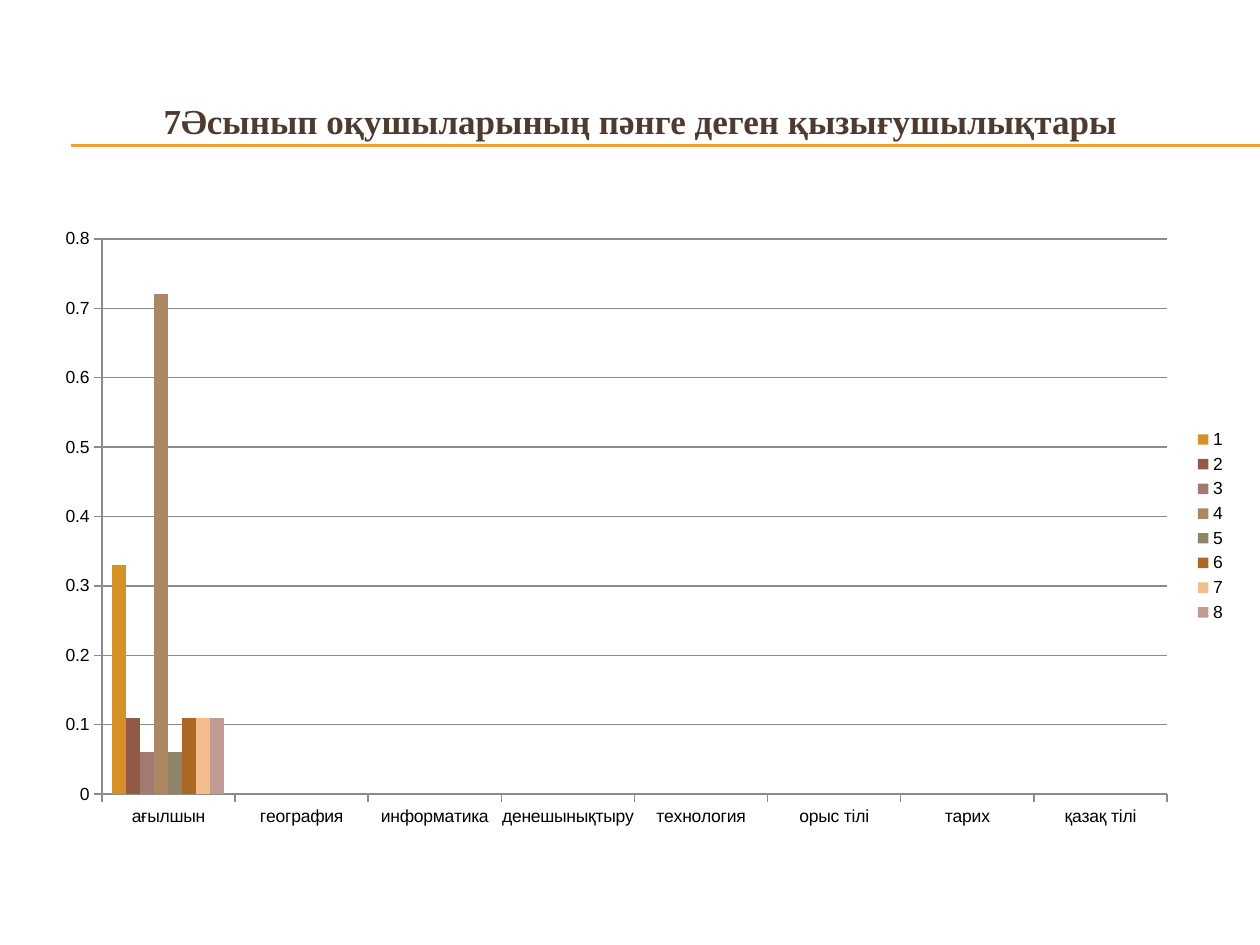
from lxml import etree
from pptx import Presentation
from pptx.chart.data import CategoryChartData as Data
from pptx.dml.color import RGBColor
from pptx.enum.chart import XL_CHART_TYPE as Kind, XL_LEGEND_POSITION as Side, XL_TICK_MARK as Tick
from pptx.enum.shapes import MSO_CONNECTOR as Link
from pptx.enum.text import MSO_ANCHOR as Anchor, PP_ALIGN as Align
from pptx.oxml import parse_xml
from pptx.oxml.ns import nsdecls, qn
from pptx.util import Pt

SCALE = 914400 / 126
TITLE = "7Әсынып оқушыларының пәнге деген қызығушылықтары"
SUBJECTS = ["ағылшын", "география", "информатика", "денешынықтыру",
            "технология", "орыс тілі", "тарих", "қазақ тілі"]
SCORES = [0.33, 0.11, 0.06, 0.72, 0.06, 0.11, 0.11, 0.11]
COLORS = ["D59028", "925945", "A17B72", "AD8761",
          "8F8467", "AB6824", "F3BD8B", "BF9B93"]


def emu(*px):
    """Turn px lengths into EMU."""
    return [round(n * SCALE) for n in px]


def paint(part, color):
    """Give a fill or a font colour holder a solid colour."""
    part.rgb = RGBColor.from_string(color)


def stroke(line, color, width):
    """Set the colour and width of a line."""
    line.width = Pt(width)
    paint(line.color, color)


def add_rules(slide, left, top, right):
    """Draw the double rule under the title."""
    for y in (top, top + 1):
        rule = slide.shapes.add_connector(Link.STRAIGHT, *emu(left, y, right, y))
        stroke(rule.line, "F0A22E", 0.75)
        etree.SubElement(rule._element.spPr, qn("a:effectLst"))


def add_title(slide, *box):
    """Place the centred title in its box."""
    frame = slide.shapes.add_textbox(*emu(*box)).text_frame
    frame.word_wrap = True
    frame.vertical_anchor = Anchor.MIDDLE
    para = frame.paragraphs[0]
    para.text = TITLE
    para.alignment = Align.CENTER
    font = para.font
    font.name, font.size, font.bold = "Times New Roman", Pt(20), True
    paint(font.color, "4E3B30")


def fix_plot(chart, x, y, wide, high):
    """Fix the inner plot area as shares of the chart."""
    plot = chart._chartSpace.chart.plotArea
    for old in plot.findall(qn("c:layout")):
        plot.remove(old)
    plot.insert(0, parse_xml(
        f'<c:layout {nsdecls("c")}><c:manualLayout><c:layoutTarget val="inner"/>'
        '<c:xMode val="edge"/><c:yMode val="edge"/>'
        f'<c:x val="{x}"/><c:y val="{y}"/><c:w val="{wide}"/><c:h val="{high}"/>'
        '</c:manualLayout></c:layout>'))


def add_bars(slide, *box):
    """Place the column chart with its axes and legend."""
    data = Data()
    data.categories = SUBJECTS
    blanks = [None] * (len(SUBJECTS) - 1)
    for num, score in enumerate(SCORES, 1):
        first = [0] + blanks[1:] if num == 1 else blanks
        data.add_series(str(num), [score] + first)
    chart = slide.shapes.add_chart(Kind.COLUMN_CLUSTERED, *emu(*box), data).chart
    chart.has_title = False
    chart.font.name, chart.font.size = "Arial", Pt(10)
    paint(chart.font.color, "000000")

    plot = chart.plots[0]
    plot.gap_width, plot.overlap, plot.vary_by_categories = 150, 0, False
    for series, color in zip(plot.series, COLORS):
        series.invert_if_negative = False
        series.format.fill.solid()
        paint(series.format.fill.fore_color, color)

    for axis in (chart.category_axis, chart.value_axis):
        axis.major_tick_mark, axis.minor_tick_mark = Tick.OUTSIDE, Tick.NONE
        stroke(axis.format.line, "8B8B8B", 0.79)
    scale = chart.value_axis
    scale.minimum_scale, scale.maximum_scale, scale.major_unit = 0, 0.8, 0.1
    stroke(scale.major_gridlines.format.line, "8B8B8B", 0.79)

    chart.has_legend = True
    chart.legend.position = Side.RIGHT
    chart.legend.include_in_layout = False
    fix_plot(chart, 0.05, 0.04, 0.89, 0.89)


def main():
    """Build the slide and save it."""
    deck = Presentation()
    deck.slide_width, deck.slide_height = emu(1260, 945)
    slide = deck.slides.add_slide(deck.slide_layouts[6])
    slide.background.fill.solid()
    paint(slide.background.fill.fore_color, "FFFFFF")
    add_rules(slide, 71, 145, 1260)
    add_title(slide, 42, 63, 1197, 116)
    add_bars(slide, 42, 214, 1197, 624)
    deck.save("out.pptx")


if __name__ == "__main__":
    main()
